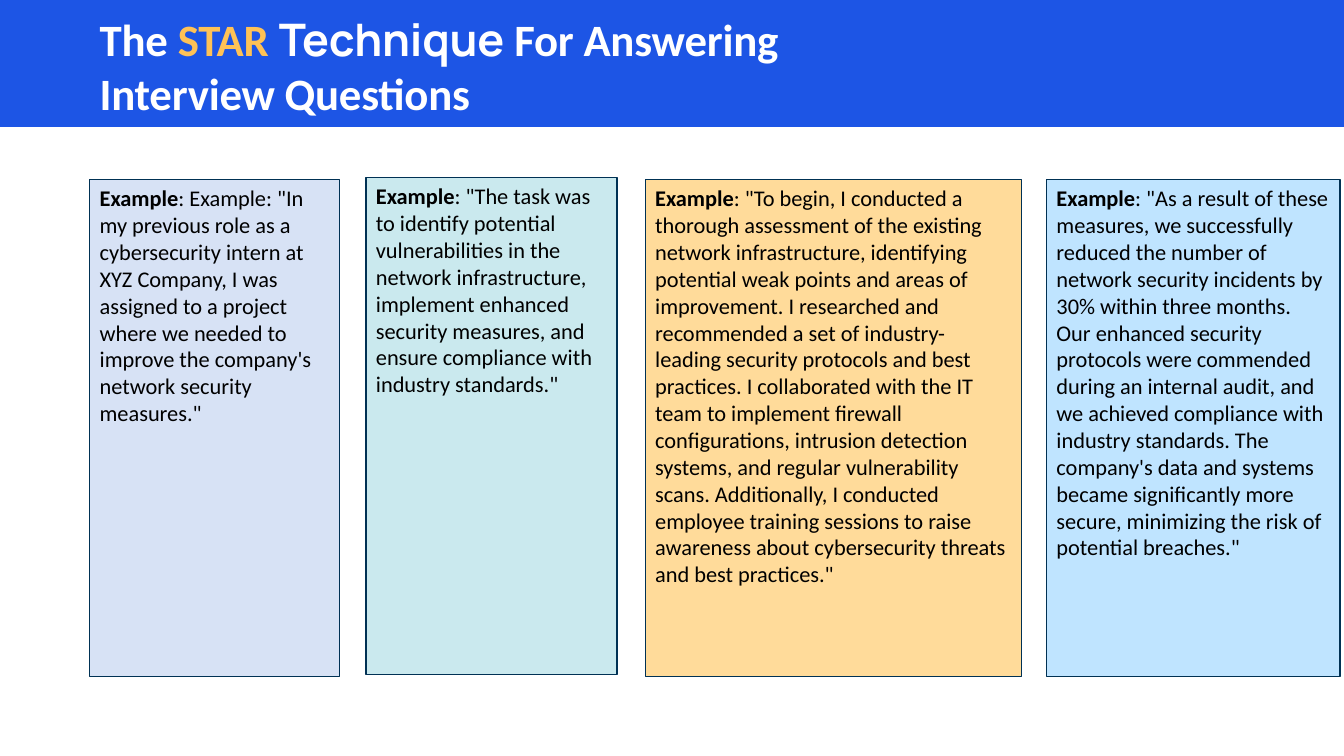
import pptx
import pptx.util
import pptx.dml.color
import pptx.enum.shapes
import pptx.enum.text

Inches = pptx.util.Inches
RECT = pptx.enum.shapes.MSO_SHAPE.RECTANGLE
ANCHOR = pptx.enum.text.MSO_ANCHOR

THEME = {
    "banner": "1D55E5", "title": "FFFFFF", "accent": "FFC256",
    "body": "000000", "border": "003154",
    "blue": "D7E2F5", "teal": "CAE9EE", "gold": "FFDB9A", "sky": "BFE4FF",
    "font": "Calibri", "display": "Manrope",
    "title size": 32, "body size": 16,
}


def tint(name):
    """Return the theme colour of that name."""
    return pptx.dml.color.RGBColor.from_string(THEME[name])


def write(para, text, font="font", size="body size", color="body", bold=False, track=0):
    """Add a run; track is letter spacing in hundredths of a point."""
    run = para.add_run()
    run.text = text
    run.font.name = THEME[font]
    run.font.size = pptx.util.Pt(THEME[size])
    run.font.color.rgb = tint(color)
    run.font.bold = bold
    if track:
        run._r.get_or_add_rPr().set("spc", str(track))


deck = pptx.Presentation()
deck.slide_width = Inches(13.33)
deck.slide_height = Inches(7.5)
slide = deck.slides.add_slide(deck.slide_layouts[6])

# Title banner
banner = slide.shapes.add_shape(RECT, 0, 0, deck.slide_width, Inches(1.26))
banner.shadow.inherit = False
banner.fill.solid()
banner.fill.fore_color.rgb = tint("banner")
banner.line.fill.background()

title = slide.shapes.add_textbox(Inches(0.89), Inches(0.21), Inches(8.75), Inches(0.88))
title.text_frame.word_wrap = True
title.text_frame.vertical_anchor = ANCHOR.MIDDLE
for text, font, color in [
    ("The ", "font", "title"),
    ("STAR ", "font", "accent"),
    ("Technique", "display", "title"),
    (" For Answering Interview Questions", "font", "title"),
]:
    write(title.text_frame.paragraphs[0], text, font=font, size="title size",
          color=color, bold=True, track=-20)

# One card for each step: left, top, width, fill, text
cards = [
    (0.89, 1.78, 2.48, "blue",
     ": Example: \"In my previous role as a cybersecurity intern at XYZ Company, "
     "I was assigned to a project where we needed to improve the company's "
     "network security measures.\""),
    (3.63, 1.76, 2.49, "teal",
     ": \"The task was to identify potential vulnerabilities in the network "
     "infrastructure, implement enhanced security measures, and ensure compliance "
     "with industry standards.\""),
    (6.4, 1.78, 3.73, "gold",
     ": \"To begin, I conducted a thorough assessment of the existing network "
     "infrastructure, identifying potential weak points and areas of improvement. "
     "I researched and recommended a set of industry-leading security protocols "
     "and best practices. I collaborated with the IT team to implement firewall "
     "configurations, intrusion detection systems, and regular vulnerability scans. "
     "Additionally, I conducted employee training sessions to raise awareness about "
     "cybersecurity threats and best practices.\""),
    (10.38, 1.78, 2.91, "sky",
     ": \"As a result of these measures, we successfully reduced the number of "
     "network security incidents by 30% within three months. Our enhanced security "
     "protocols were commended during an internal audit, and we achieved compliance "
     "with industry standards. The company's data and systems became significantly "
     "more secure, minimizing the risk of potential breaches.\""),
]
for left, top, width, fill, text in cards:
    card = slide.shapes.add_shape(RECT, Inches(left), Inches(top), Inches(width), Inches(4.93))
    card.shadow.inherit = False
    card.fill.solid()
    card.fill.fore_color.rgb = tint(fill)
    card.line.color.rgb = tint("border")
    card.line.width = pptx.util.Pt(1)
    frame = card.text_frame
    frame.word_wrap = True
    frame.vertical_anchor = ANCHOR.TOP
    para = frame.paragraphs[0]
    para.alignment = pptx.enum.text.PP_ALIGN.LEFT
    write(para, "Example", bold=True)
    write(para, text)

deck.save("out.pptx")
